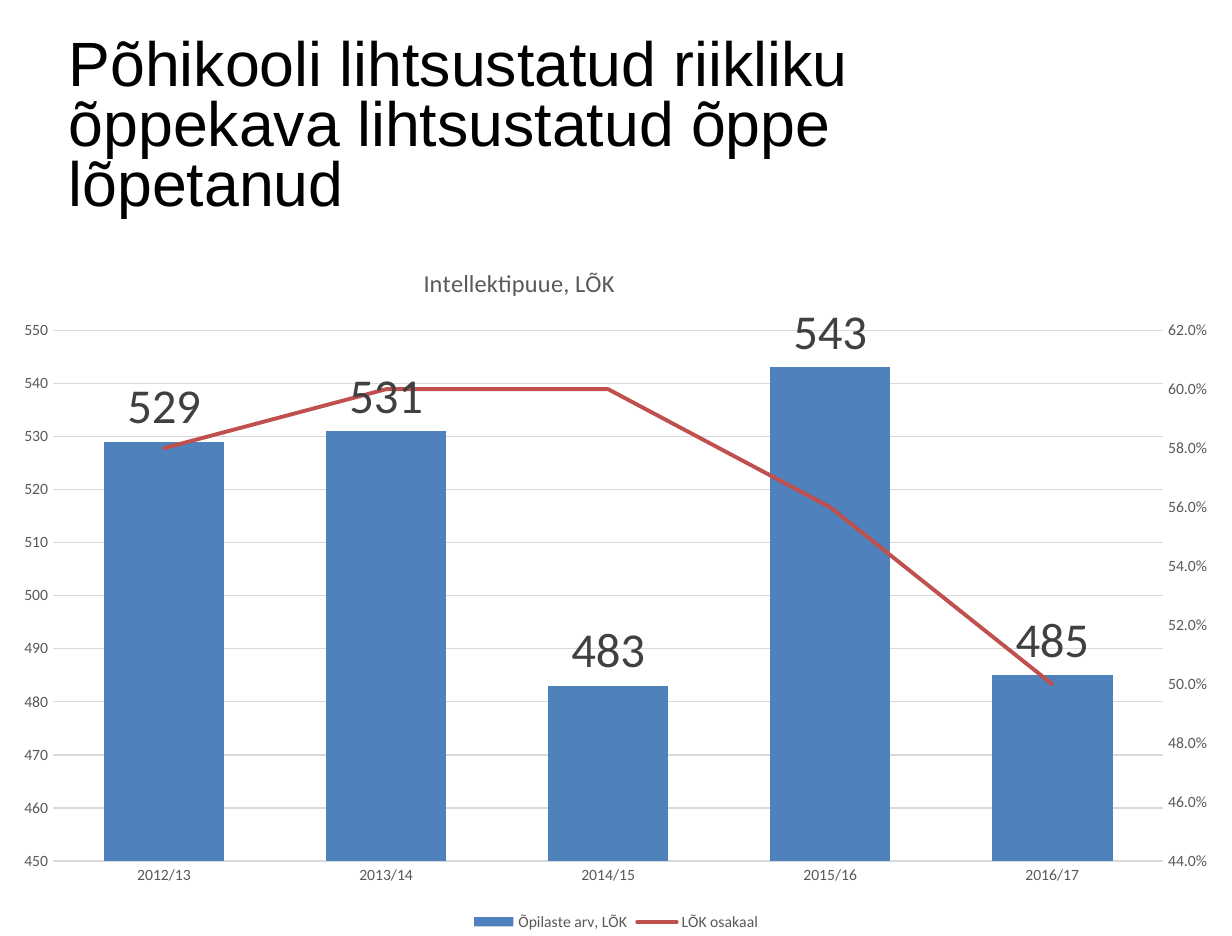
from dataclasses import dataclass

from pptx import Presentation
from pptx import util as u
from pptx.chart.data import CategoryChartData
from pptx.dml.color import RGBColor
from pptx.enum import chart as kinds, text
from pptx.oxml import parse_xml
from pptx.oxml.ns import nsdecls, qn


@dataclass(frozen=True)
class Theme:
    heading_font: str = "Arial"
    chart_font: str = "Calibri"
    black: str = "000000"
    muted: str = "595959"
    label: str = "404040"
    grid: str = "D9D9D9"
    bar: str = "4F81BD"
    share: str = "C0504D"
    heading_size: float = 36
    chart_title_size: float = 14
    chart_size: float = 10
    axis_size: float = 9
    label_size: float = 28
    hairline: float = 0.75
    share_width: float = 2.25


THEME = Theme()
CHART_WIDTH, CHART_HEIGHT = 708.5, 399.5
YEARS = ["2012/13", "2013/14", "2014/15", "2015/16", "2016/17"]
GRADUATES = [529, 531, 483, 543, 485]
SHARES = [0.58, 0.6, 0.6, 0.56, 0.5]


def style_font(font, size, color, name=THEME.chart_font):
    font.size = u.Pt(size)
    font.name = name
    font.bold = False
    font.color.rgb = RGBColor.from_string(color)


def style_line(line, color, width):
    line.color.rgb = RGBColor.from_string(color)
    line.width = u.Pt(width)


def add_text(page, words, *, left, top, width, height, size, color, font, spacing):
    box = page.shapes.add_textbox(u.Pt(left), u.Pt(top), u.Pt(width), u.Pt(height))
    frame = box.text_frame
    frame.word_wrap = True
    frame.vertical_anchor = text.MSO_ANCHOR.MIDDLE
    frame.margin_left = frame.margin_right = frame.margin_top = frame.margin_bottom = 0
    para = frame.paragraphs[0]
    para.line_spacing = spacing
    span = para.add_run()
    span.text = words
    style_font(span.font, size, color, font)


def manual_layout(target="", **points):
    inner = f'<c:layoutTarget val="{target}"/>' if target else ""
    inner += "".join(f'<c:{side}Mode val="edge"/>' for side in ("x", "y"))
    for key, value in points.items():
        whole = CHART_WIDTH if key in ("x", "w") else CHART_HEIGHT
        inner += f'<c:{key} val="{value / whole}"/>'
    return parse_xml(
        f'<c:layout {nsdecls("c")}><c:manualLayout>{inner}</c:manualLayout></c:layout>'
    )


def place(parent, layout, index):
    for old in parent.findall(qn("c:layout")):
        parent.remove(old)
    parent.insert(index, layout)


def style_axis(axis, line_color=None):
    axis.major_tick_mark = axis.minor_tick_mark = kinds.XL_TICK_MARK.NONE
    style_font(axis.tick_labels.font, THEME.axis_size, THEME.muted)
    if line_color:
        style_line(axis.format.line, line_color, THEME.hairline)
    else:
        axis.format.line.fill.background()


def scale_axis(axis, low, high, step):
    axis.minimum_scale = low
    axis.maximum_scale = high
    axis.major_unit = step


def move_to_right_axis(chart, series, low, high, step):
    element = series._element
    inverted = element.find(qn("c:invertIfNegative"))
    if inverted is not None:
        element.remove(inverted)
    line_plot = parse_xml(
        f'<c:lineChart {nsdecls("c")}><c:grouping val="standard"/>'
        '<c:varyColors val="0"/><c:marker val="1"/>'
        '<c:axId val="5001"/><c:axId val="5002"/></c:lineChart>'
    )
    line_plot.insert(2, element)
    area = chart._chartSpace.chart.plotArea
    area.find(qn("c:barChart")).addnext(line_plot)
    font = (
        '<c:spPr><a:ln><a:noFill/></a:ln></c:spPr><c:txPr><a:bodyPr/><a:p><a:pPr>'
        f'<a:defRPr sz="{THEME.axis_size * 100}" b="0"><a:solidFill>'
        f'<a:srgbClr val="{THEME.muted}"/></a:solidFill>'
        f'<a:latin typeface="{THEME.chart_font}"/></a:defRPr></a:pPr>'
        '<a:endParaRPr lang="et-EE"/></a:p></c:txPr>'
    )
    ticks = '<c:majorTickMark val="none"/><c:minorTickMark val="none"/>'
    value_axis = parse_xml(
        f'<c:valAx {nsdecls("c", "a")}><c:axId val="5002"/><c:scaling>'
        f'<c:orientation val="minMax"/><c:max val="{high}"/><c:min val="{low}"/></c:scaling>'
        '<c:delete val="0"/><c:axPos val="r"/>'
        f'<c:numFmt formatCode="0.0%" sourceLinked="0"/>{ticks}'
        f'<c:tickLblPos val="nextTo"/>{font}<c:crossAx val="5001"/>'
        '<c:crosses val="max"/><c:crossBetween val="between"/>'
        f'<c:majorUnit val="{step}"/></c:valAx>'
    )
    hidden_axis = parse_xml(
        f'<c:catAx {nsdecls("c")}><c:axId val="5001"/><c:scaling>'
        '<c:orientation val="minMax"/></c:scaling><c:delete val="1"/>'
        f'<c:axPos val="b"/>{ticks}<c:tickLblPos val="nextTo"/>'
        '<c:crossAx val="5002"/><c:crosses val="autoZero"/></c:catAx>'
    )
    left_axis = area.find(qn("c:valAx"))
    left_axis.addnext(value_axis)
    value_axis.addnext(hidden_axis)


def add_title(chart, words):
    frame = chart.chart_title.text_frame
    frame.text = words
    style_font(frame.paragraphs[0].runs[0].font, THEME.chart_title_size, THEME.muted)
    chart.chart_title.include_in_layout = False
    place(chart.chart_title._element, manual_layout(x=241, y=11.4), 1)


def add_labels(series):
    labels = series.data_labels
    labels.show_value = True
    labels.position = kinds.XL_LABEL_POSITION.OUTSIDE_END
    style_font(labels.font, THEME.label_size, THEME.label)


def add_legend(chart):
    chart.has_legend = True
    chart.legend.position = kinds.XL_LEGEND_POSITION.BOTTOM
    chart.legend.include_in_layout = False
    style_font(chart.legend.font, THEME.axis_size, THEME.muted)


def add_graduates_chart(page, left, top):
    data = CategoryChartData()
    data.categories = YEARS
    data.add_series("Õpilaste arv, LÕK", GRADUATES, "0")
    data.add_series("LÕK osakaal", SHARES, "0.0%")
    chart = page.shapes.add_chart(
        kinds.XL_CHART_TYPE.COLUMN_CLUSTERED,
        u.Pt(left), u.Pt(top), u.Pt(CHART_WIDTH), u.Pt(CHART_HEIGHT), data,
    ).chart
    style_font(chart.font, THEME.chart_size, THEME.black)
    add_title(chart, "Intellektipuue, LÕK")
    add_legend(chart)
    style_axis(chart.category_axis, THEME.grid)
    style_axis(chart.value_axis)
    scale_axis(chart.value_axis, 450, 550, 10)
    style_line(chart.value_axis.major_gridlines.format.line, THEME.grid, THEME.hairline)

    plot = chart.plots[0]
    plot.gap_width = 84
    plot.vary_by_categories = False
    bars, share = plot.series
    bars.format.fill.solid()
    bars.format.fill.fore_color.rgb = RGBColor.from_string(THEME.bar)
    add_labels(bars)

    move_to_right_axis(chart, share, 0.44, 0.62, 0.02)
    share_line = chart.plots[1].series[0]
    style_line(share_line.format.line, THEME.share, THEME.share_width)
    share_line.format.line._ln.set("cap", "rnd")
    share_line.marker.style = kinds.XL_MARKER_STYLE.NONE
    share_line.smooth = False
    area = chart._chartSpace.chart.plotArea
    place(area, manual_layout("inner", x=30.5, y=51, w=638.5, h=305.5), 0)


def main():
    deck = Presentation()
    deck.slide_width, deck.slide_height = u.Pt(708.5), u.Pt(538.5)
    page = deck.slides.add_slide(deck.slide_layouts[6])
    add_text(
        page, "Põhikooli lihtsustatud riikliku õppekava lihtsustatud õppe lõpetanud",
        left=39.5, top=24, width=592.5, height=99.5, size=THEME.heading_size,
        color=THEME.black, font=THEME.heading_font, spacing=0.8,
    )
    add_graduates_chart(page, 0, 139)
    deck.save("out.pptx")


if __name__ == "__main__":
    main()
